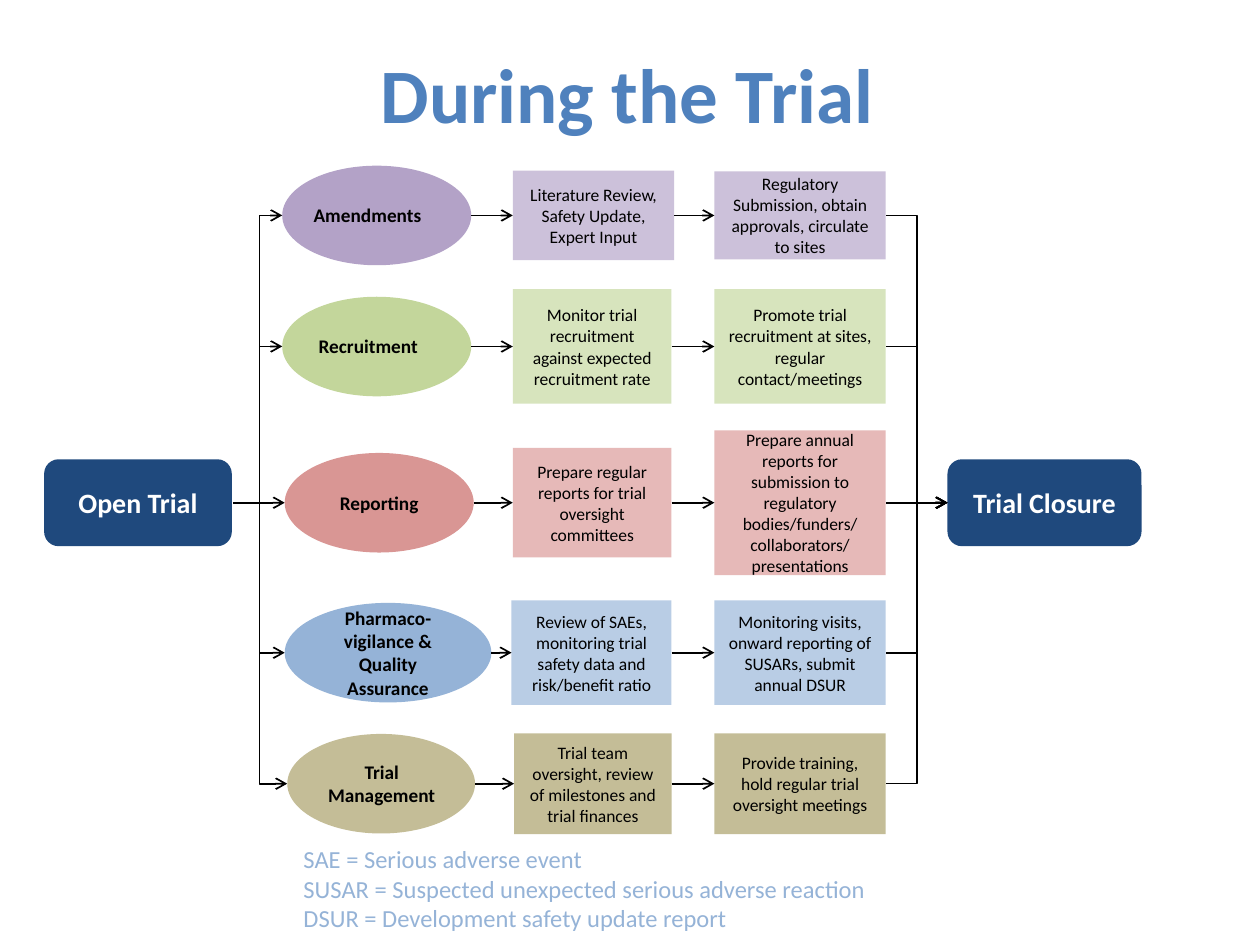
from collections import namedtuple

from lxml import etree
from pptx import Presentation
from pptx import util as u
from pptx.dml.color import RGBColor
from pptx.enum import shapes, text
from pptx.oxml.ns import qn

BLACK = RGBColor(0x00, 0x00, 0x00)
WHITE = RGBColor(0xFF, 0xFF, 0xFF)
TITLE_BLUE = RGBColor(0x4F, 0x81, 0xBD)
NAVY = RGBColor(0x1F, 0x49, 0x7D)
PURPLE = RGBColor(0xB3, 0xA2, 0xC7)
PALE_PURPLE = RGBColor(0xCC, 0xC1, 0xDA)
GREEN = RGBColor(0xC3, 0xD6, 0x9B)
PALE_GREEN = RGBColor(0xD7, 0xE4, 0xBD)
RED = RGBColor(0xD9, 0x96, 0x94)
PALE_RED = RGBColor(0xE6, 0xB9, 0xB8)
BLUE = RGBColor(0x95, 0xB3, 0xD7)
PALE_BLUE = RGBColor(0xB9, 0xCD, 0xE5)
TAN = RGBColor(0xC4, 0xBD, 0x97)

SHAPE = shapes.MSO_SHAPE
LINK = shapes.MSO_CONNECTOR
LEFT, CENTER = text.PP_ALIGN.LEFT, text.PP_ALIGN.CENTER

MAIN_Y = 3.99
OPEN_RIGHT, SPLIT_X = 1.85, 2.06
RESULT_X, RESULT_W = 5.67, 1.36
MERGE_X, CLOSURE_X = 7.28, 7.52
OVAL_H = 0.79

Row = namedtuple("Row", "y dark pale topic oval label task task_at task_h result result_h")
ROWS = [
    Row(1.71, PURPLE, PALE_PURPLE, "Amendments", (2.24, 1.5), (2.39, 1.28, 0.29, LEFT),
        "Literature Review, Safety Update, Expert Input", (4.07, 1.28), 0.71,
        "Regulatory Submission, obtain approvals, circulate to sites", 0.7),
    Row(2.75, GREEN, PALE_GREEN, "Recruitment", (2.24, 1.5), (2.43, 1.12, 0.29, LEFT),
        "Monitor trial recruitment against expected recruitment rate", (4.07, 1.26), 0.91,
        "Promote trial recruitment at sites, regular contact/meetings", 0.91),
    Row(MAIN_Y, RED, PALE_RED, "Reporting", (2.26, 1.5), None,
        "Prepare regular reports for trial oversight committees", (4.07, 1.26), 0.87,
        "Prepare annual reports for submission to regulatory "
        "bodies/funders/ collaborators/ presentations", 1.15),
    Row(5.18, BLUE, PALE_BLUE, "Pharmaco-vigilance & Quality Assurance", (2.26, 1.64), None,
        "Review of SAEs, monitoring trial safety data and risk/benefit ratio", (4.06, 1.27), 0.83,
        "Monitoring visits, onward reporting of SUSARs, submit annual DSUR", 0.83),
    Row(6.22, TAN, TAN, "Trial Management", (2.28, 1.49), (2.4, 1.26, 0.47, CENTER),
        "Trial team oversight, review of milestones and trial finances", (4.08, 1.25), 0.8,
        "Provide training, hold regular trial oversight meetings", 0.8),
]
GLOSSARY = [
    "SAE = Serious adverse event",
    "SUSAR = Suspected unexpected serious adverse reaction",
    "DSUR = Development safety update report",
]


def write(sp, words, size, color, bold=False, align=CENTER):
    tf = sp.text_frame
    tf.word_wrap = True
    tf.text = words
    for p in tf.paragraphs:
        p.alignment = align
        for r in p.runs:
            r.font.name = "Calibri"
            r.font.size = u.Pt(size)
            r.font.bold = bold
            r.font.color.rgb = color


def add_text(s, x, y, w, h, words, size, color, bold=False, align=LEFT):
    sp = s.shapes.add_textbox(u.Inches(x), u.Inches(y), u.Inches(w), u.Inches(h))
    write(sp, words, size, color, bold, align)
    return sp


def add_box(s, kind, x, mid_y, w, h, fill, words="", size=10, color=BLACK, bold=False):
    sp = s.shapes.add_shape(kind, u.Inches(x), u.Inches(mid_y - h / 2),
                            u.Inches(w), u.Inches(h))
    sp.shadow.inherit = False
    sp.fill.solid()
    sp.fill.fore_color.rgb = fill
    sp.line.fill.background()
    if words:
        write(sp, words, size, color, bold)
        sp.text_frame.vertical_anchor = text.MSO_ANCHOR.MIDDLE
    return sp


def add_arrow(s, kind, x1, y1, x2, y2):
    cx = s.shapes.add_connector(kind, u.Inches(x1), u.Inches(y1), u.Inches(x2), u.Inches(y2))
    cx.line.color.rgb = BLACK
    cx.line.width = u.Pt(1)
    etree.SubElement(cx.line._get_or_add_ln(), qn("a:tailEnd"), type="arrow")
    etree.SubElement(cx._element.spPr, qn("a:effectLst"))
    return cx


def add_elbow(s, x1, y1, x2, y2, bend_x):
    cx = add_arrow(s, LINK.ELBOW, x1, y1, x2, y2)
    ratio = round((bend_x - x1) / (x2 - x1) * 100000)
    guides = cx._element.spPr.find(qn("a:prstGeom")).find(qn("a:avLst"))
    etree.SubElement(guides, qn("a:gd"), name="adj1", fmla=f"val {ratio}")


def add_row(s, row):
    oval_x, oval_w = row.oval
    task_x, task_w = row.task_at
    add_elbow(s, OPEN_RIGHT, MAIN_Y, oval_x, row.y, SPLIT_X)
    add_elbow(s, RESULT_X + RESULT_W, row.y, CLOSURE_X, MAIN_Y, MERGE_X)

    add_box(s, SHAPE.OVAL, oval_x, row.y, oval_w, OVAL_H, row.dark,
            "" if row.label else row.topic, 11, bold=True)
    if row.label:
        x, w, h, align = row.label
        add_text(s, x, row.y - h / 2, w, h, row.topic, 11, BLACK, True, align)
    task = add_box(s, SHAPE.RECTANGLE, task_x, row.y, task_w, row.task_h, row.pale, row.task)
    result = add_box(s, SHAPE.RECTANGLE, RESULT_X, row.y, RESULT_W, row.result_h,
                     row.pale, row.result)

    to_task = add_arrow(s, LINK.STRAIGHT, oval_x + oval_w, row.y, task_x, row.y)
    to_task.end_connect(task, 1)
    to_result = add_arrow(s, LINK.STRAIGHT, task_x + task_w, row.y, RESULT_X, row.y)
    to_result.begin_connect(task, 3)
    to_result.end_connect(result, 1)


def main():
    prs = Presentation()
    prs.slide_width, prs.slide_height = u.Inches(10), u.Inches(7.5)
    s = prs.slides.add_slide(prs.slide_layouts[6])

    title = add_text(s, 0.16, 0.43, 9.64, 0.71, "During the Trial", 44, TITLE_BLUE, True, CENTER)
    title.text_frame.paragraphs[0].line_spacing = 0.85
    for x, w, words in [(0.35, 1.49, "Open Trial"), (CLOSURE_X, 1.54, "Trial Closure")]:
        add_box(s, SHAPE.ROUNDED_RECTANGLE, x, MAIN_Y, w, 0.69, NAVY, words, 16, WHITE, True)
    for row in ROWS:
        add_row(s, row)
    add_text(s, 2.31, 6.65, 4.81, 0.81, "\n".join(GLOSSARY), 14, BLUE)

    prs.save("out.pptx")


if __name__ == "__main__":
    main()
